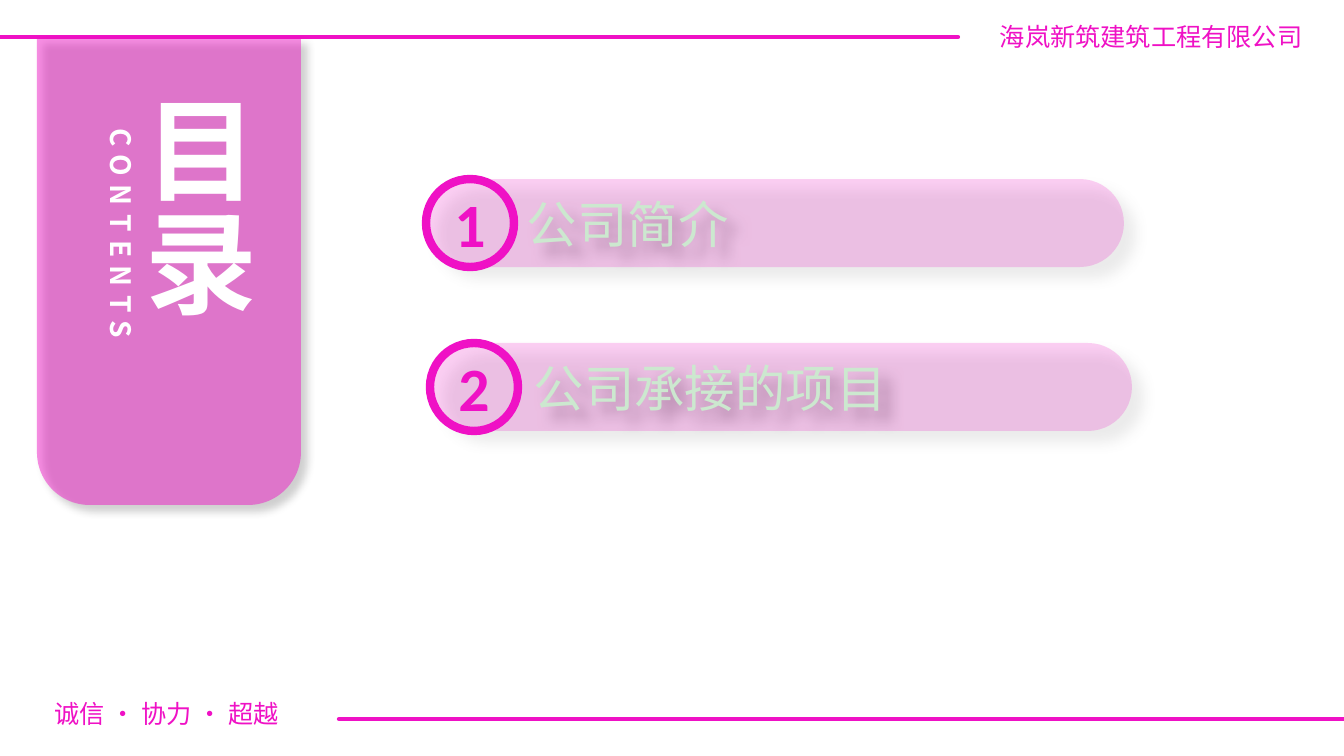
from dataclasses import dataclass

from lxml import etree
from pptx import Presentation
from pptx import util as u
from pptx.dml.color import RGBColor
from pptx.enum import shapes, text
from pptx.oxml.ns import qn

EMU_PER_PX = 914400 / 100.8
WIDTH, HEIGHT = 1344, 756
MAGENTA, WHITE, PALE_GREEN = "EF11C5", "FFFFFF", "CCE8CF"
CJK, LATIN = "Noto Sans CJK SC", "Calibri"
TIGHT = 0.84


@dataclass(frozen=True)
class Box:
    left: int
    top: int
    width: int
    height: int

    def emu(self) -> list[u.Emu]:
        return [px(n) for n in (self.left, self.top, self.width, self.height)]


@dataclass(frozen=True)
class Style:
    size: int
    color: str
    font: str = CJK
    bold: bool = False
    tracking: int = 0


@dataclass(frozen=True)
class Shadow:
    blur: int
    distance: int


@dataclass(frozen=True)
class Item:
    number: str
    title: str
    bar: Box
    ring: Box


ITEMS = [
    Item("1", "公司简介", Box(426, 179, 698, 88), Box(426, 179, 88, 88)),
    Item("2", "公司承接的项目", Box(433, 343, 699, 88), Box(430, 343, 88, 88)),
]


def px(length: int) -> u.Emu:
    return u.Emu(round(length * EMU_PER_PX))


def rgb(value: str) -> RGBColor:
    return RGBColor.from_string(value)


def add_run(paragraph, words: str, style: Style) -> None:
    run = paragraph.add_run()
    run.text = words
    font = run.font
    font.size, font.bold, font.name = u.Pt(style.size), style.bold, style.font
    font.color.rgb = rgb(style.color)
    properties = run._r.get_or_add_rPr()
    if style.tracking:
        properties.set("spc", str(style.tracking * 100))
    east_asian = etree.Element(qn("a:ea"), typeface=style.font)
    properties.find(qn("a:latin")).addnext(east_asian)


def add_text(slide, box: Box, lines: list[str], style: Style,
             align=text.PP_ALIGN.LEFT, vertical: bool = False) -> None:
    frame = slide.shapes.add_textbox(*box.emu()).text_frame
    frame.word_wrap = not vertical
    if vertical:
        frame._txBody.bodyPr.set("vert", "eaVert")
    for index, line in enumerate(lines):
        paragraph = frame.add_paragraph() if index else frame.paragraphs[0]
        paragraph.alignment = align
        if not vertical:
            paragraph.line_spacing = TIGHT
        add_run(paragraph, line, style)


def add_rule(slide, start: int, end: int, y: int) -> None:
    rule = slide.shapes.add_connector(
        shapes.MSO_CONNECTOR.STRAIGHT, px(start), px(y), px(end), px(y))
    rule.line.color.rgb = rgb(MAGENTA)
    rule.line.width = u.Pt(3)
    rule.line._ln.set("cap", "rnd")
    etree.SubElement(rule._element.spPr, qn("a:effectLst"))


def add_glass(parent, kind, box: Box, opacity: int, shadow: Shadow):
    """Add a translucent magenta shape whose shadow shows through it."""
    shape = parent.shapes.add_shape(kind, *box.emu())
    shape.fill.solid()
    shape.fill.fore_color.rgb = rgb(MAGENTA)
    shape.line.fill.background()
    properties = shape._element.spPr
    tint = properties.find(qn("a:solidFill")).find(qn("a:srgbClr"))
    etree.SubElement(tint, qn("a:alpha"), val=str(opacity * 1000))
    shape.shadow.inherit = False
    outer = etree.SubElement(
        properties.find(qn("a:effectLst")), qn("a:outerShdw"),
        blurRad=str(u.Pt(shadow.blur)), dist=str(u.Pt(shadow.distance)),
        dir="2700000", algn="tl", rotWithShape="0")
    black = etree.SubElement(outer, qn("a:srgbClr"), val="000000")
    etree.SubElement(black, qn("a:alpha"), val="40000")
    return shape


def add_item(slide, item: Item) -> None:
    group = slide.shapes.add_group_shape()
    bar = add_glass(group, shapes.MSO_SHAPE.ROUNDED_RECTANGLE, item.bar, 20,
                    Shadow(10, 11))
    bar.adjustments[0] = 0.5
    bar.text_frame.margin_left = px(88)
    title = bar.text_frame.paragraphs[0]
    title.alignment = text.PP_ALIGN.LEFT
    add_run(title, item.title, Style(36, PALE_GREEN))

    ring = group.shapes.add_shape(shapes.MSO_SHAPE.OVAL, *item.ring.emu())
    ring.shadow.inherit = False
    ring.fill.background()
    ring.line.color.rgb = rgb(MAGENTA)
    ring.line.width = u.Pt(6)
    number = ring.text_frame.paragraphs[0]
    number.alignment = text.PP_ALIGN.CENTER
    add_run(number, item.number, Style(44, MAGENTA, LATIN, bold=True))


def main() -> None:
    deck = Presentation()
    deck.slide_width, deck.slide_height = px(WIDTH), px(HEIGHT)
    slide = deck.slides.add_slide(deck.slide_layouts[6])
    slide.background.fill.solid()
    slide.background.fill.fore_color.rgb = rgb(WHITE)

    caption = Style(18, MAGENTA)
    add_rule(slide, 0, 958, 37)
    add_text(slide, Box(990, 21, 334, 40), ["海岚新筑建筑工程有限公司"], caption)
    add_rule(slide, 339, WIDTH, 719)
    add_text(slide, Box(16, 698, 301, 40), ["诚信 · 协力 · 超越"], caption,
             text.PP_ALIGN.CENTER)

    panel = add_glass(slide, shapes.MSO_SHAPE.ROUND_2_SAME_RECTANGLE,
                      Box(37, 38, 264, 467), 47, Shadow(6, 6))
    panel.adjustments[0], panel.adjustments[1] = 0, 0.2
    add_text(slide, Box(89, 119, 54, 236), ["CONTENTS"],
             Style(20, WHITE, bold=True, tracking=6), vertical=True)
    add_text(slide, Box(136, 97, 250, 281), ["目", "录"],
             Style(80, WHITE, bold=True))

    for item in ITEMS:
        add_item(slide, item)
    deck.save("out.pptx")


if __name__ == "__main__":
    main()
